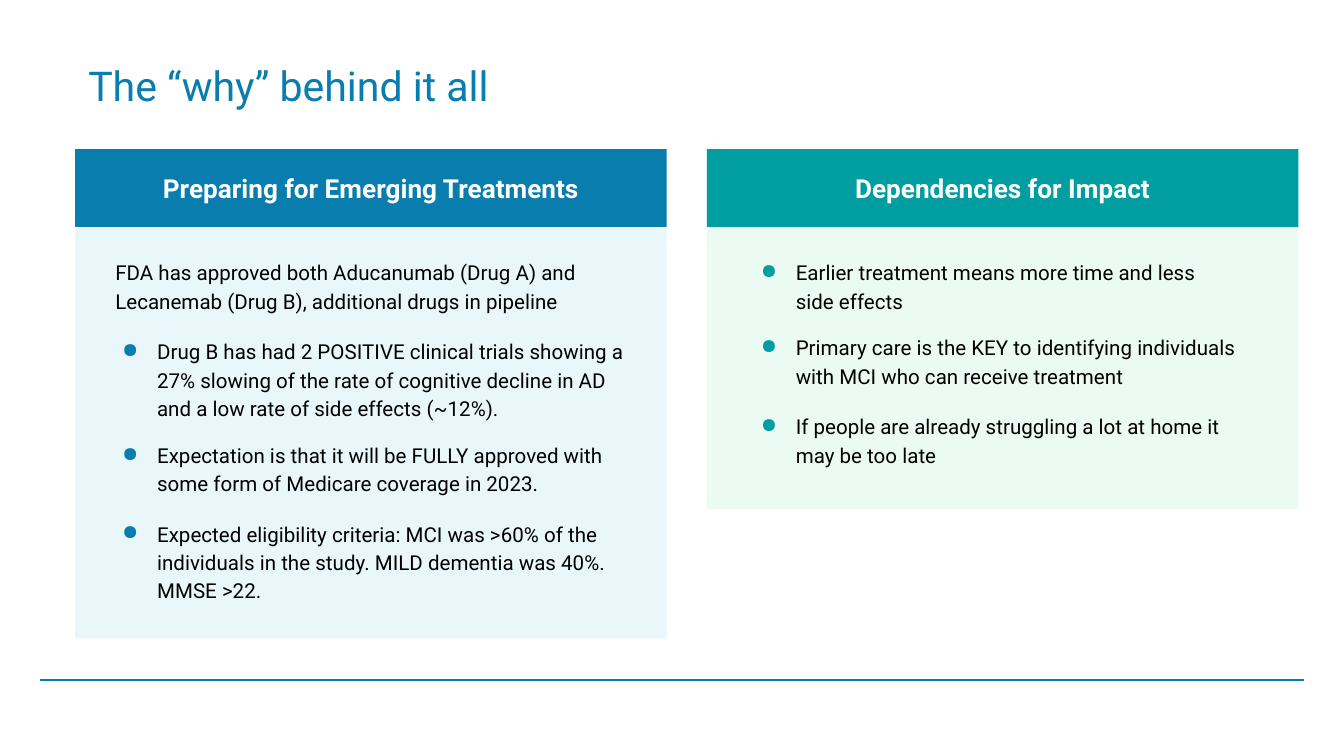
import copy
import dataclasses

import lxml.etree
import pptx
import pptx.dml.color
import pptx.enum.shapes
import pptx.enum.text
import pptx.oxml.ns
import pptx.util

Cm = pptx.util.Cm
Pt = pptx.util.Pt
RGBColor = pptx.dml.color.RGBColor
Align = pptx.enum.text.PP_ALIGN
Anchor = pptx.enum.text.MSO_ANCHOR
qn = pptx.oxml.ns.qn

BLUE = RGBColor(0x08, 0x7D, 0xAE)
TEAL = RGBColor(0x00, 0x9E, 0xA1)
SKY = RGBColor(0xE9, 0xF7, 0xFB)
MINT = RGBColor(0xEC, 0xFA, 0xF4)
WHITE = RGBColor(0xFF, 0xFF, 0xFF)
BLACK = RGBColor(0x00, 0x00, 0x00)
FONT = "Roboto"

WIDTH = Cm(11.18)
HEAD_TOP, HEAD_TALL = Cm(2.82), Cm(1.47)
BODY_TOP = Cm(4.32)
TEXT_TOP, TEXT_WIDE, TEXT_TALL = Cm(4.72), Cm(10.16), Cm(6.07)


@dataclasses.dataclass
class Item:
    text: str
    before: float = 12
    after: float = 0
    bullet: bool = True


@dataclasses.dataclass
class Panel:
    title: str
    left: int
    tall: int
    inset: int
    dark: RGBColor
    pale: RGBColor
    items: list[Item]


PANELS = [
    Panel("Preparing for Emerging Treatments", Cm(1.42), Cm(7.75), Cm(0.51), BLUE, SKY, [
        Item("FDA has approved both Aducanumab (Drug A) and Lecanemab (Drug B), "
             "additional drugs in pipeline", before=0, bullet=False),
        Item("Drug B has had 2 POSITIVE clinical trials showing a 27% slowing of the rate "
             "of cognitive decline in AD and a low rate of side effects (~12%)."),
        Item("Expectation is that it will be FULLY approved with some form of Medicare "
             "coverage in 2023.", before=10),
        Item("Expected eligibility criteria: MCI was >60% of the individuals in the study. "
             "MILD dementia was 40%. MMSE >22.", after=10),
    ]),
    Panel("Dependencies for Impact", Cm(13.36), Cm(5.31), Cm(0.64), TEAL, MINT, [
        Item("Earlier treatment means more time and less\vside effects", before=0),
        Item("Primary care is the KEY to identifying individuals\v"
             "with MCI who can receive treatment", before=10),
        Item("If people are already struggling a lot at home it\vmay be too late"),
    ]),
]


def write(para, text: str, *, size: float, color: RGBColor, bold: bool = False,
          align=Align.LEFT, before: float = 0, after: float = 0,
          line: float = 1.0, dot: RGBColor | None = None) -> None:
    props = para._p.get_or_add_pPr()
    if dot is not None:
        props.set("marL", str(Cm(0.79)))
        props.set("indent", str(Cm(-0.66)))
        tint = lxml.etree.SubElement(props, qn("a:buClr"))
        lxml.etree.SubElement(tint, qn("a:srgbClr"), val=str(dot))
        lxml.etree.SubElement(props, qn("a:buChar"), char="●")
    para.text = text
    para.alignment = align
    para.line_spacing = line
    para.space_before, para.space_after = Pt(before), Pt(after)
    for run in para.runs:
        run.font.name, run.font.size, run.font.bold = FONT, Pt(size), bold
        run.font.color.rgb = color
    for gap in para._p.findall(qn("a:br")):
        gap.append(copy.deepcopy(para.runs[0]._r.rPr))


def pad(frame, side: int, edge: int) -> None:
    frame.word_wrap = True
    frame.margin_left = frame.margin_right = side
    frame.margin_top = frame.margin_bottom = edge


def add_rect(slide, left: int, top: int, tall: int, color: RGBColor):
    rect = slide.shapes.add_shape(
        pptx.enum.shapes.MSO_SHAPE.RECTANGLE, left, top, WIDTH, tall)
    rect.shadow.inherit = False
    rect.fill.solid()
    rect.fill.fore_color.rgb = color
    rect.line.fill.background()
    return rect


def add_box(slide, left: int, top: int, wide: int, tall: int):
    frame = slide.shapes.add_textbox(left, top, wide, tall).text_frame
    pad(frame, Cm(0.25), Cm(0.13))
    return frame


def add_panel(slide, panel: Panel) -> None:
    add_rect(slide, panel.left, BODY_TOP, panel.tall, panel.pale)
    head = add_rect(slide, panel.left, HEAD_TOP, HEAD_TALL, panel.dark).text_frame
    pad(head, Cm(0.25), Cm(0.25))
    head.vertical_anchor = Anchor.MIDDLE
    write(head.paragraphs[0], panel.title, size=14, color=WHITE, bold=True,
          align=Align.CENTER)
    body = add_box(slide, panel.left + panel.inset, TEXT_TOP, TEXT_WIDE, TEXT_TALL)
    for index, item in enumerate(panel.items):
        para = body.add_paragraph() if index else body.paragraphs[0]
        write(para, item.text, size=11, color=BLACK, line=1.15, before=item.before,
              after=item.after, dot=panel.dark if item.bullet else None)


def add_rule(slide) -> None:
    rule = slide.shapes.add_connector(
        pptx.enum.shapes.MSO_CONNECTOR.STRAIGHT, Cm(0.76), Cm(12.85), Cm(24.64), Cm(12.85))
    rule.line.color.rgb = BLUE
    rule.line.width = Pt(0.75)
    lxml.etree.SubElement(rule._element.spPr, qn("a:effectLst"))


def main() -> None:
    """Build the slide on why early treatment matters."""
    deck = pptx.Presentation()
    deck.slide_width, deck.slide_height = Cm(25.4), Cm(14.29)
    slide = deck.slides.add_slide(deck.slide_layouts[6])
    add_rule(slide)
    title = add_box(slide, Cm(1.42), Cm(1.02), Cm(22.86), Cm(2.13))
    write(title.paragraphs[0], "The “why” behind it all", size=22, color=BLUE)
    for panel in PANELS:
        add_panel(slide, panel)
    deck.save("out.pptx")


if __name__ == "__main__":
    main()
